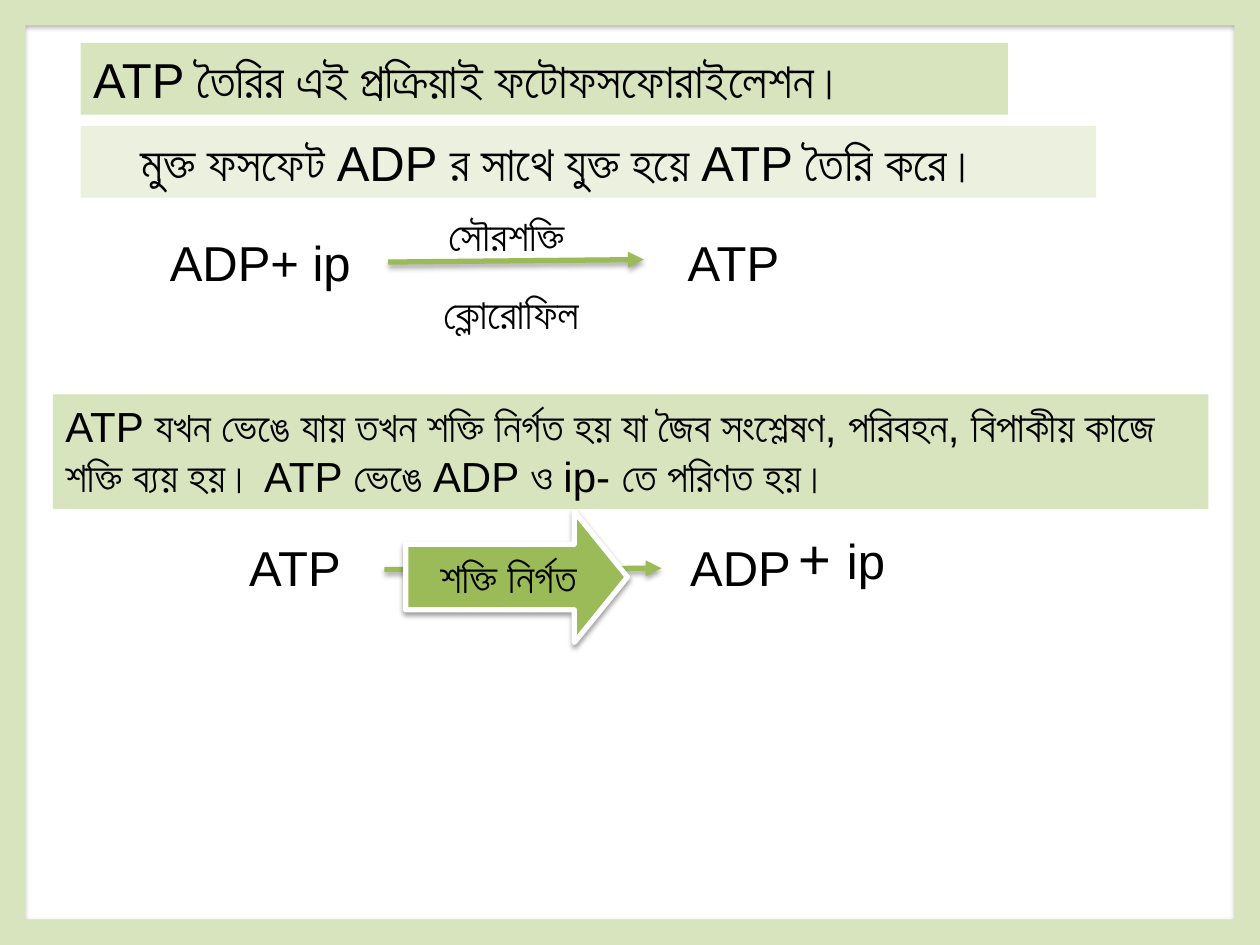
from dataclasses import dataclass
from typing import Optional

from lxml.etree import SubElement
from pptx import Presentation
from pptx.dml.color import RGBColor
from pptx.enum.shapes import MSO_CONNECTOR, MSO_SHAPE
from pptx.enum.text import MSO_ANCHOR, PP_ALIGN
from pptx.oxml.ns import qn
from pptx.util import Inches, Pt

COLORS = {
    "pale": "D7E4BD",
    "paler": "EBF1DE",
    "green": "9BBB59",
    "white": "FFFFFF",
    "black": "000000",
}
FONT = "Arial"


@dataclass
class Label:
    text: str
    left: float
    top: float
    width: float
    height: float
    size: int = 28
    fill: Optional[str] = None
    indent: float = 0
    tab: float = 0
    wrap: bool = True


@dataclass
class Arrow:
    start: tuple[float, float]
    end: tuple[float, float]


SUN_REACTION = Label("ADP+ ip\tATP", 1.25, 1.8, 5.5, 0.57, tab=4.11)
SUN_ARROW = Arrow((3.08, 2.08), (5.11, 2.06))
NOTES = [
    Label("সৌরশক্তি", 3.46, 1.61, 1.17, 0.5, 24),
    Label("ক্লোরোফিল", 3.42, 2.23, 1.33, 0.5, 24),
    Label("ATP যখন ভেঙে যায় তখন শক্তি নির্গত হয় যা জৈব সংশ্লেষণ, পরিবহন, "
          "বিপাকীয় কাজে শক্তি ব্যয় হয়। ATP ভেঙে ADP ও ip- তে পরিণত হয়।",
          0.42, 3.13, 9.17, 0.91, 24, "pale"),
    Label("ATP তৈরির এই প্রক্রিয়াই ফটোফসফোরাইলেশন।",
          0.64, 0.34, 7.36, 0.57, fill="pale"),
    Label("মুক্ত ফসফেট ADP র সাথে যুক্ত হয়ে ATP তৈরি করে।",
          0.64, 1, 8.06, 0.57, fill="paler", indent=0.38),
]
BREAKDOWN = Label("ATP\tADP", 1.88, 4.22, 5.5, 0.57, tab=3.5)
BREAKDOWN_ARROW = Arrow((3.05, 4.52), (5.25, 4.51))
PHOSPHATE = Label("+ ip", 6.24, 4.11, 0.97, 0.64, wrap=False)


def rgb(name: str) -> RGBColor:
    return RGBColor.from_string(COLORS[name])


def add_shadow(sp, alpha: int, distance: float) -> None:
    """Cast a soft black shadow straight down."""
    props = sp._element.spPr
    effects = props.find(qn("a:effectLst"))
    if effects is None:
        effects = SubElement(props, qn("a:effectLst"))
    shadow = SubElement(effects, qn("a:outerShdw"), blurRad=str(Pt(3.1)),
                        dist=str(Pt(distance)), dir="5400000", rotWithShape="0")
    color = SubElement(shadow, qn("a:srgbClr"), val=COLORS["black"])
    SubElement(color, qn("a:alpha"), val=str(alpha * 1000))


def format_runs(p, size: int) -> None:
    for r in p.runs:
        r.font.name = FONT
        r.font.size = Pt(size)
        r.font.color.rgb = rgb("black")


def add_label(s, label: Label):
    box = s.shapes.add_textbox(Inches(label.left), Inches(label.top),
                               Inches(label.width), Inches(label.height))
    if label.fill:
        box.fill.solid()
        box.fill.fore_color.rgb = rgb(label.fill)
    tf = box.text_frame
    tf.word_wrap = label.wrap
    p = tf.paragraphs[0]
    p.text = label.text
    format_runs(p, label.size)
    props = p._p.get_or_add_pPr()
    if label.indent:
        props.set("marL", str(Inches(label.indent)))
    if label.tab:
        tabs = SubElement(props, qn("a:tabLst"))
        SubElement(tabs, qn("a:tab"), pos=str(Inches(label.tab)), algn="l")
    return box


def add_arrow(s, arrow: Arrow) -> None:
    line = s.shapes.add_connector(MSO_CONNECTOR.STRAIGHT,
                                  *map(Inches, arrow.start + arrow.end))
    line.line.color.rgb = rgb("green")
    line.line.width = Pt(3)
    SubElement(line.line._get_or_add_ln(), qn("a:tailEnd"), type="triangle")
    add_shadow(line, 35, 1.8)


def add_preset(s, kind: MSO_SHAPE, at: tuple, adjustments: tuple, fill: str):
    sp = s.shapes.add_shape(kind, *map(Inches, at))
    for i, value in enumerate(adjustments):
        sp.adjustments[i] = value
    sp.fill.solid()
    sp.fill.fore_color.rgb = rgb(fill)
    sp.line.fill.background()
    sp.shadow.inherit = False
    return sp


def add_energy_arrow(s) -> None:
    sp = add_preset(s, MSO_SHAPE.RIGHT_ARROW, (3.22, 4.06, 1.76, 1.04),
                    (0.5, 0.405), "green")
    sp.line.color.rgb = rgb("white")
    sp.line.width = Pt(3)
    add_shadow(sp, 38, 1.6)
    tf = sp.text_frame
    tf.word_wrap = True
    tf.vertical_anchor = MSO_ANCHOR.MIDDLE
    tf.margin_left = Inches(0.18)
    p = tf.paragraphs[0]
    p.text = "শক্তি নির্গত"
    p.alignment = PP_ALIGN.CENTER
    format_runs(p, 24)


def main() -> None:
    prs = Presentation()
    prs.slide_width, prs.slide_height = Inches(10), Inches(7.5)
    s = prs.slides.add_slide(prs.slide_layouts[6])
    s.background.fill.solid()
    s.background.fill.fore_color.rgb = rgb("white")

    frame = add_preset(s, MSO_SHAPE.FRAME, (0, 0, 10, 7.5), (0.027,), "pale")
    add_shadow(frame, 35, 1.8)
    add_label(s, SUN_REACTION)
    add_arrow(s, SUN_ARROW)
    for note in NOTES:
        add_label(s, note)
    add_label(s, BREAKDOWN)
    add_arrow(s, BREAKDOWN_ARROW)

    p = add_label(s, PHOSPHATE).text_frame.paragraphs[0]
    p.text = "+ "
    p.add_run().text = "ip"
    format_runs(p, PHOSPHATE.size)
    p.runs[0].font.size = Pt(32)

    add_energy_arrow(s)
    prs.save("out.pptx")


if __name__ == "__main__":
    main()
